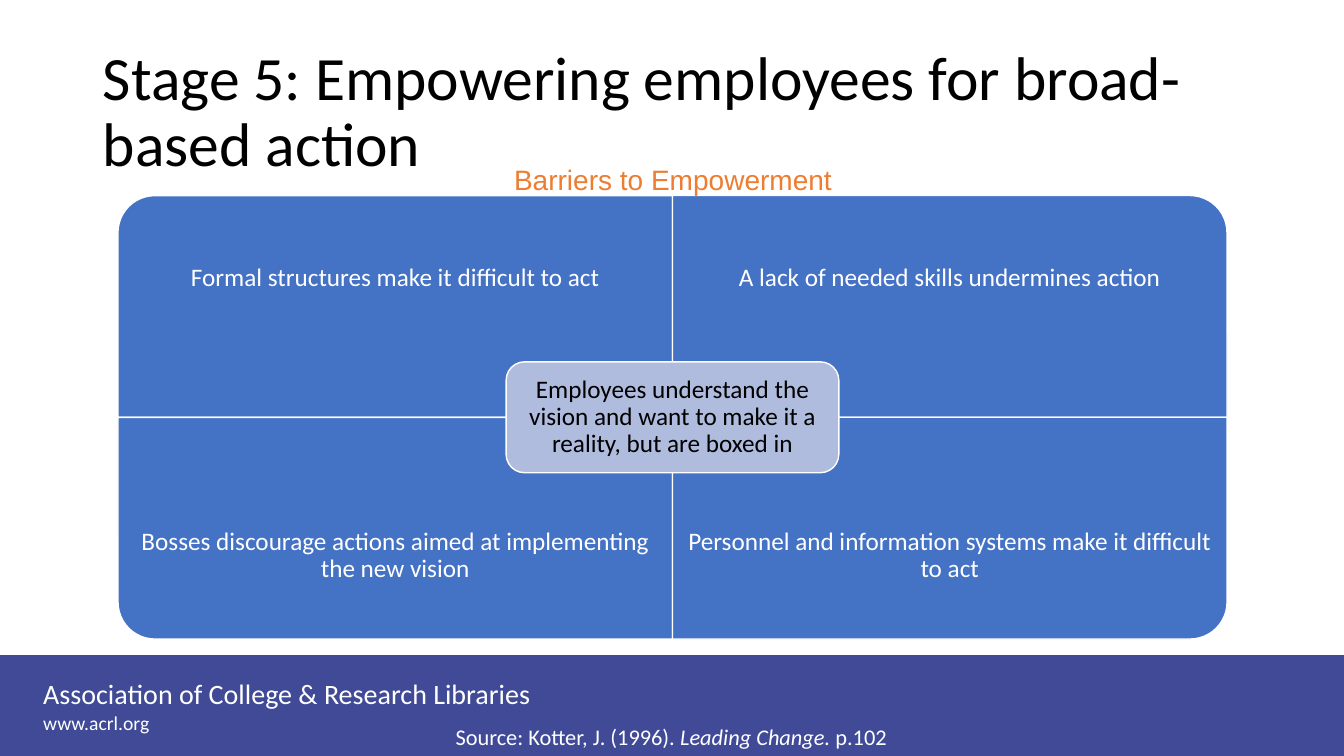
import pptx
import pptx.util
import pptx.dml.color
import pptx.enum.shapes
import pptx.enum.text

Inches = pptx.util.Inches
RGBColor = pptx.dml.color.RGBColor
Shape = pptx.enum.shapes.MSO_SHAPE
Align = pptx.enum.text.PP_ALIGN
Anchor = pptx.enum.text.MSO_ANCHOR

WHITE = RGBColor(0xFF, 0xFF, 0xFF)
BLACK = RGBColor(0x00, 0x00, 0x00)
INDIGO = RGBColor(0x40, 0x4A, 0x97)
BLUE = RGBColor(0x44, 0x72, 0xC4)
PALE_BLUE = RGBColor(0xB0, 0xBC, 0xDE)
ORANGE = RGBColor(0xED, 0x7D, 0x31)

SLIDE_W, SLIDE_H = 13.33, 7.5

# Column, row, rotation that turns the rounded corner outwards, text
BARRIERS = [
    (0, 0, 270, "Formal structures make it difficult to act"),
    (1, 0, 0, "A lack of needed skills undermines action"),
    (0, 1, 180, "Bosses discourage actions aimed at implementing the new vision"),
    (1, 1, 90, "Personnel and information systems make it difficult to act"),
]


def write(frame, lines, size=18, color=WHITE, font="Calibri", align=Align.LEFT,
          anchor=Anchor.TOP, spacing=None, inset=None):
    """Fill a text frame; each line is a list of (text, format overrides)."""
    frame.word_wrap = True
    frame.auto_size = pptx.enum.text.MSO_AUTO_SIZE.NONE
    frame.vertical_anchor = anchor
    if inset is not None:
        frame.margin_left = frame.margin_right = Inches(inset)
        frame.margin_top = frame.margin_bottom = Inches(inset)
    for number, line in enumerate(lines):
        paragraph = frame.add_paragraph() if number else frame.paragraphs[0]
        paragraph.alignment = align
        paragraph.line_spacing = spacing
        for text, changes in line:
            run = paragraph.add_run()
            run.text = text
            run.font.name = font
            run.font.size = pptx.util.Pt(changes.get("size", size))
            run.font.italic = changes.get("italic", False)
            run.font.color.rgb = color


def add_text(slide, box, lines, **text_format):
    label = slide.shapes.add_textbox(*map(Inches, box))
    write(label.text_frame, lines, **text_format)


def add_block(slide, kind, box, fill, outline=None, rotation=0):
    """Add a filled shape that covers the box once it has been rotated."""
    left, top, width, height = box
    if rotation % 180:
        left, top = left + (width - height) / 2, top + (height - width) / 2
        width, height = height, width
    block = slide.shapes.add_shape(kind, *map(Inches, (left, top, width, height)))
    block.shadow.inherit = False
    block.rotation = rotation
    block.fill.solid()
    block.fill.fore_color.rgb = fill
    if outline is None:
        block.line.fill.background()
    else:
        block.line.color.rgb = outline
        block.line.width = pptx.util.Pt(1)
    return block


def build_footer(slide, box):
    left, top, width, height = box
    add_block(slide, Shape.RECTANGLE, box, INDIGO)
    add_text(slide, (left + 0.33, top + height / 6, 9.89, height * 2 / 3),
             [[("Association of College & Research Libraries", {"size": 20})],
              [("www.acrl.org", {"size": 14})]])


def build_source(slide, box):
    add_text(slide, box, [[("Source: Kotter, J. (1996). ", {}),
                           ("Leading Change. ", {"italic": True}),
                           ("p.102", {})]], size=16)


def build_title(slide, box):
    title = slide.shapes.title
    title.left, title.top, title.width, title.height = map(Inches, box)
    write(title.text_frame,
          [[("Stage 5: Empowering employees for broad-based action", {})]],
          size=44, color=BLACK, anchor=Anchor.MIDDLE, spacing=0.9)


def build_barrier_matrix(slide, box):
    left, top, width, height = box
    column, row = width / 2, height / 2
    centred = dict(align=Align.CENTER, anchor=Anchor.MIDDLE, spacing=0.9)

    for col_no, row_no, rotation, barrier in BARRIERS:
        x, y = left + col_no * column, top + row_no * row
        add_block(slide, Shape.ROUND_1_RECTANGLE, (x, y, column, row),
                  BLUE, WHITE, rotation)
        # Text keeps to the outer three quarters, clear of the core
        add_text(slide, (x, y + row_no * row / 4, column, row * 3 / 4),
                 [[(barrier, {})]], inset=0.14, **centred)

    core_w, core_h = column * 0.6, row / 2
    core = add_block(slide, Shape.ROUNDED_RECTANGLE,
                     (left + column - core_w / 2, top + row - core_h / 2,
                      core_w, core_h), PALE_BLUE, WHITE)
    write(core.text_frame,
          [[("Employees understand the vision and want to make it a reality, "
             "but are boxed in", {})]], color=BLACK, inset=0.07, **centred)


def main():
    deck = pptx.Presentation()
    deck.slide_width, deck.slide_height = Inches(SLIDE_W), Inches(SLIDE_H)
    slide = deck.slides.add_slide(deck.slide_layouts[5])
    slide.background.fill.solid()
    slide.background.fill.fore_color.rgb = WHITE

    build_footer(slide, (0, 6.5, SLIDE_W, 1))
    build_title(slide, (0.92, 0.4, 11.5, 1.45))
    build_barrier_matrix(slide, (1.17, 1.94, 11, 4.4))
    add_text(slide, (5, 1.56, 5.07, 0.44), [[("Barriers to Empowerment", {})]],
             size=20, color=ORANGE, font="Arial")
    build_source(slide, (4.42, 7.13, 5.15, 0.37))
    deck.save("out.pptx")


if __name__ == "__main__":
    main()
